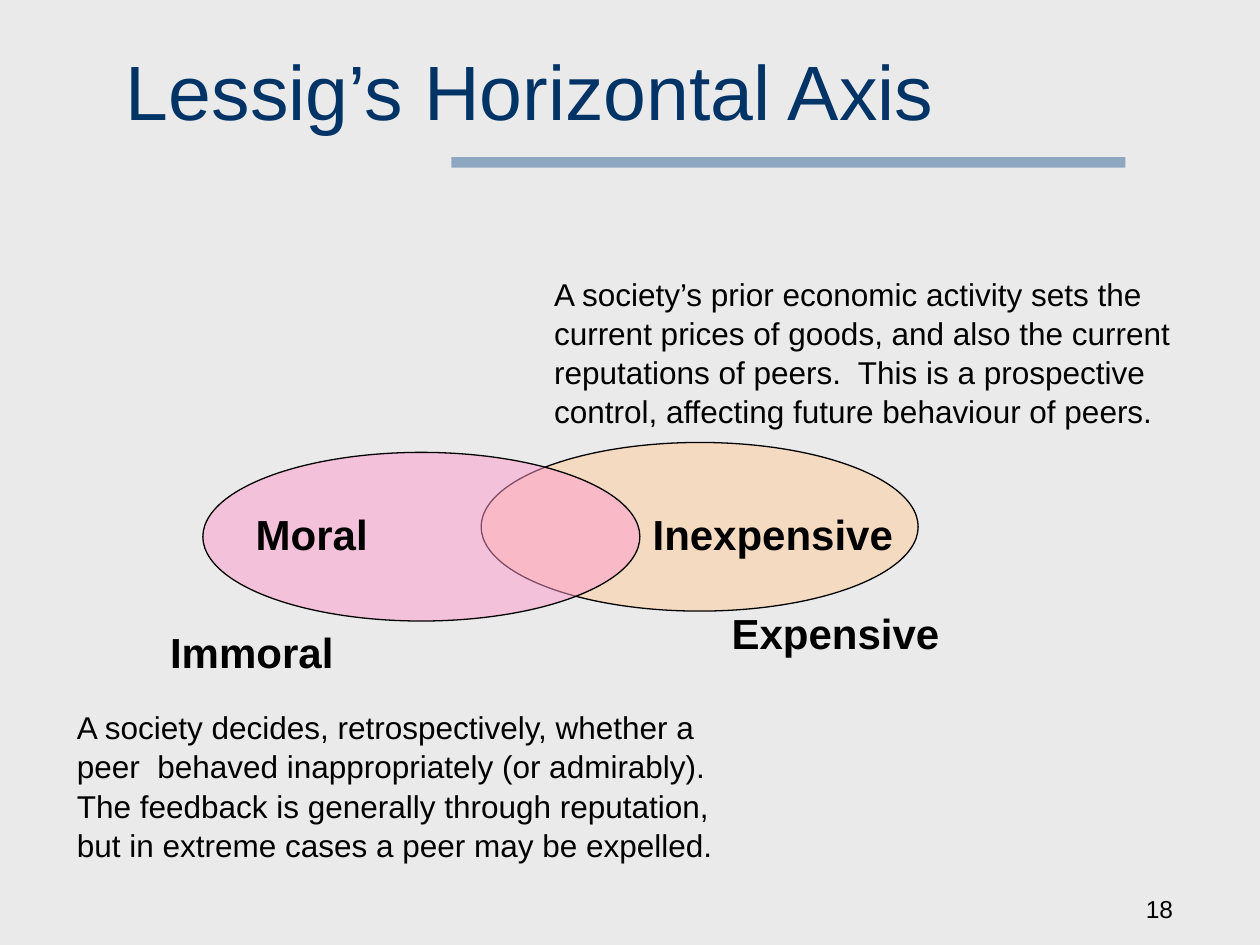
import dataclasses
import typing

import pptx
import pptx.dml.color
import pptx.enum.shapes
import pptx.enum.text
import pptx.oxml
import pptx.oxml.ns
import pptx.util

Cm = pptx.util.Cm
Pt = pptx.util.Pt
Kind = pptx.enum.shapes.MSO_SHAPE
Align = pptx.enum.text.PP_ALIGN
Anchor = pptx.enum.text.MSO_ANCHOR
Fit = pptx.enum.text.MSO_AUTO_SIZE


@dataclasses.dataclass(frozen=True)
class Theme:
    font: str = "Arial"
    back: str = "EAEAEA"
    title: str = "003366"
    bar: str = "336699"
    ink: str = "000000"
    pink: str = "FF99CC"
    peach: str = "FFCC99"
    head: int = 44
    label: int = 24
    body: int = 18
    small: int = 14


THEME = Theme()


class Box(typing.NamedTuple):
    """Left, top, width and height in centimetres."""
    left: float
    top: float
    width: float
    height: float

    def place(self) -> list:
        return [Cm(side) for side in self]


class Label(typing.NamedTuple):
    text: str
    left: float
    top: float
    width: float
    align: typing.Any = Align.LEFT


class Note(typing.NamedTuple):
    text: str
    box: Box


def color(code: str):
    return pptx.dml.color.RGBColor.from_string(code)


def add_text(shapes, text: str, box: Box, *, size: int, ink: str = THEME.ink,
             bold: bool = False, align=Align.LEFT, anchor=Anchor.TOP,
             wrap: bool = True, fit=Fit.NONE, before: float = 0,
             line: float = 1.0) -> None:
    frame = shapes.add_textbox(*box.place()).text_frame
    frame.word_wrap = wrap
    frame.auto_size = fit
    frame.vertical_anchor = anchor
    par = frame.paragraphs[0]
    par.alignment = align
    par.space_before = Pt(before)
    par.line_spacing = line
    run = par.add_run()
    run.text = text
    run.font.name = THEME.font
    run.font.size = Pt(size)
    run.font.bold = bold
    run.font.color.rgb = color(ink)


def add_glass(shapes, kind, box: Box, fill: str, edge: bool = True) -> None:
    """Add a half transparent shape."""
    shape = shapes.add_shape(kind, *box.place())
    shape.shadow.inherit = False
    shape.fill.solid()
    shape.fill.fore_color.rgb = color(fill)
    tint = shape.fill._xPr.find(".//" + pptx.oxml.ns.qn("a:srgbClr"))
    tint.append(pptx.oxml.parse_xml(
        f'<a:alpha {pptx.oxml.ns.nsdecls("a")} val="50000"/>'))
    if edge:
        shape.line.color.rgb = color(THEME.ink)
        shape.line.width = Pt(0.75)
    else:
        shape.line.fill.background()


def add_set(shapes, left: float, top: float, fill: str,
            labels: list[Label]) -> None:
    """Add one ellipse and the labels in and below it."""
    add_glass(shapes, Kind.OVAL, Box(left, top, 8.81, 3.4), fill)
    for label in labels:
        add_text(shapes, label.text,
                 Box(label.left, label.top, label.width, 1.27),
                 size=THEME.label, bold=True, align=label.align,
                 wrap=False, fit=Fit.SHAPE_TO_FIT_TEXT)


PRICE = [Label("Inexpensive", 12.9, 10.13, 5.36, Align.CENTER),
         Label("Expensive", 14.5, 12.12, 4.7)]
MORAL = [Label("Moral", 4.9, 10.13, 2.77, Align.CENTER),
         Label("Immoral", 3.18, 12.5, 3.81)]
NOTES = [
    Note("A society’s prior economic activity sets the current prices of "
         "goods, and also the current reputations of peers.  This is a "
         "prospective control, affecting future behaviour of peers.",
         Box(10.92, 5.38, 13.11, 3.33)),
    Note("A society decides, retrospectively, whether a peer  behaved "
         "inappropriately (or admirably).  The feedback is generally "
         "through reputation, but in extreme cases a peer may be expelled.",
         Box(1.3, 14.12, 13.59, 3.33)),
]


def main() -> None:
    deck = pptx.Presentation()
    deck.slide_width, deck.slide_height = Cm(25.4), Cm(19.05)
    slide = deck.slides.add_slide(deck.slide_layouts[6])
    slide.background.fill.solid()
    slide.background.fill.fore_color.rgb = color(THEME.back)
    shapes = slide.shapes

    add_glass(shapes, Kind.RECTANGLE, Box(9.1, 3.17, 13.59, 0.21),
              THEME.bar, edge=False)
    add_text(shapes, "Lessig’s Horizontal Axis", Box(2.29, 0.64, 21.72, 2.34),
             size=THEME.head, ink=THEME.title, anchor=Anchor.MIDDLE)
    add_set(shapes.add_group_shape().shapes, 9.7, 8.92, THEME.peach, PRICE)
    add_set(shapes, 4.09, 9.12, THEME.pink, MORAL)
    for note in NOTES:
        add_text(shapes, note.text, note.box, size=THEME.body,
                 fit=Fit.SHAPE_TO_FIT_TEXT, before=9, line=1.04)
    add_text(shapes, "18", Box(18.62, 17.48, 5.28, 1.27), size=THEME.small,
             align=Align.RIGHT, anchor=Anchor.BOTTOM)
    deck.save("out.pptx")


if __name__ == "__main__":
    main()
